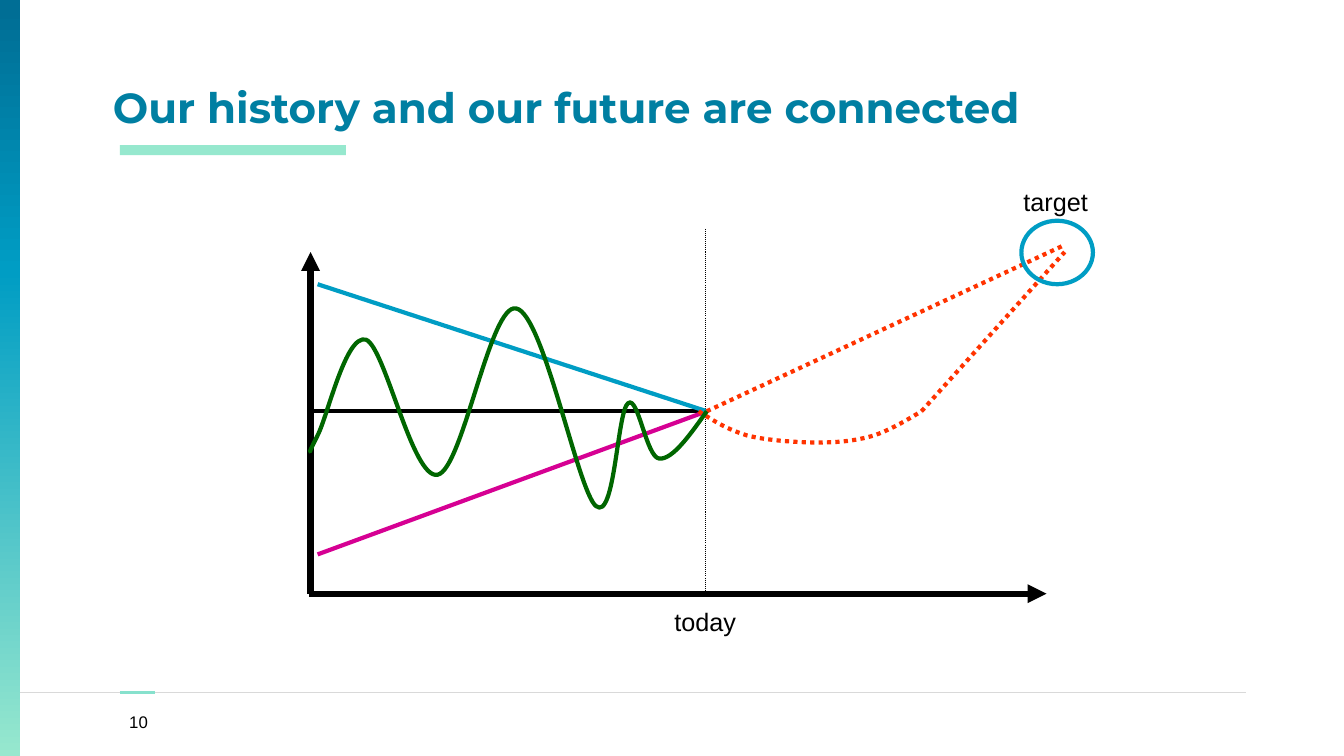
from copy import deepcopy

from lxml.etree import SubElement
from pptx import Presentation
from pptx.dml.color import RGBColor
from pptx.enum.dml import MSO_LINE
from pptx.enum.shapes import MSO_CONNECTOR, MSO_SHAPE
from pptx.enum.text import MSO_ANCHOR, MSO_AUTO_SIZE, PP_ALIGN
from pptx.oxml.ns import qn
from pptx.util import Inches, Pt

COLORS = {
    "title": "007FA2", "text": "000000", "axis": "000000", "rule": "D9D9D9",
    "rule_accent": "87E1CD", "underline": "96E8CE", "upper": "009DC4",
    "lower": "D60093", "history": "006600", "future": "FF3300",
}
BAND_STOPS = [(0, "97E8CE"), (0.64, "009DC4"), (0.99, "006E95")]

TITLE = "Our history and our future are connected"
# text, box, size, wraps, anchor
LABELS = [
    ("today", (6.59, 5.97, 0.81, 0.4), 18, False, MSO_ANCHOR.TOP),
    ("target", (10.05, 1.8, 0.84, 0.4), 18, False, MSO_ANCHOR.TOP),
    ("10", (1.11, 6.96, 0.53, 0.4), 12, True, MSO_ANCHOR.MIDDLE),
]

TODAY = (7.01, 4.08)
BEND = (9.14, 4.08)
# start, end, colour, width, further format
FOOTER_RULES = [
    ((0, 6.87), (12.36, 6.87), "rule", 0.75, {}),
    ((1.19, 6.87), (1.54, 6.87), "rule_accent", 2.75, {}),
]
DIAGRAM_LINES = [
    ((3.08, 5.89), (3.08, 2.5), "axis", 4.5, {"arrow": True}),
    ((3.06, 5.89), (10.38, 5.89), "axis", 4.5, {"arrow": True}),
    ((7, 2.27), (7, 5.87), "axis", 0.75, {"dotted": True}),
    ((3.08, 4.08), (6.93, 4.08), "axis", 3, {}),
    ((3.15, 5.5), TODAY, "lower", 3, {}),
    ((3.15, 2.82), TODAY, "upper", 3, {}),
    (TODAY, (10.56, 2.43), "future", 3, {"dotted": True}),
    (BEND, (10.56, 2.5), "future", 3, {"dotted": True}),
]
TARGET_RING = (10.13, 2.19, 0.71, 0.63)

# Start point, then two control points and an end point per segment
FUTURE_CURVE = [
    (6.93, 4.08),
    (7.07, 4.17), (7.21, 4.26), (7.41, 4.32),
    (7.6, 4.37), (7.91, 4.39), (8.12, 4.39),
    (8.33, 4.39), (8.5, 4.37), (8.67, 4.32),
    (8.84, 4.26), (8.99, 4.17), BEND,
]
HISTORY_CURVE = [
    (3.08, 4.47),
    (3.07, 4.49), (3.06, 4.5), (3.15, 4.32),
    (3.25, 4.13), (3.43, 3.31), (3.63, 3.37),
    (3.82, 3.44), (4.09, 4.76), (4.34, 4.71),
    (4.59, 4.66), (4.86, 3), (5.12, 3.06),
    (5.39, 3.11), (5.73, 4.87), (5.91, 5.02),
    (6.1, 5.18), (6.12, 4.08), (6.23, 4),
    (6.33, 3.92), (6.41, 4.54), (6.54, 4.55),
    (6.67, 4.56), (6.84, 4.32), TODAY,
]


def inches(values):
    return [Inches(value) for value in values]


def rgb(name):
    return RGBColor.from_string(COLORS[name])


def write(frame, text, *, size, color="text", font="Arial", bold=False,
          align=PP_ALIGN.CENTER, anchor=MSO_ANCHOR.TOP, wrap=True, spacing=None):
    frame.word_wrap = wrap
    frame.auto_size = MSO_AUTO_SIZE.NONE
    frame.vertical_anchor = anchor
    paragraph = frame.paragraphs[0]
    paragraph.alignment = align
    paragraph.line_spacing = spacing
    run = paragraph.add_run()
    run.text = text
    run.font.name, run.font.size, run.font.bold = font, Pt(size), bold
    run.font.color.rgb = rgb(color)


def stroke(line, color, width, dotted=False):
    line.color.rgb = rgb(color)
    line.width = Pt(width)
    if dotted:
        line.dash_style = MSO_LINE.ROUND_DOT


def draw_line(shapes, start, end, color, width, dotted=False, arrow=False):
    connector = shapes.add_connector(MSO_CONNECTOR.STRAIGHT, *inches(start + end))
    stroke(connector.line, color, width, dotted)
    properties = connector._element.spPr
    if arrow:
        SubElement(properties.find(qn("a:ln")), qn("a:tailEnd"), type="triangle")
    SubElement(properties, qn("a:effectLst"))


def draw_curve(shapes, points, color, dotted=False):
    """Draw a chain of cubic Bezier segments."""
    start, *controls = [inches(point) for point in points]
    builder = shapes.build_freeform(*start)
    builder.add_line_segments(controls, close=False)
    curve = builder.convert_to_shape()
    outline = curve._element.find(".//" + qn("a:path"))
    steps = outline.findall(qn("a:lnTo"))
    for first in range(0, len(steps), 3):
        bezier = SubElement(outline, qn("a:cubicBezTo"))
        for step in steps[first:first + 3]:
            bezier.append(step[0])
            outline.remove(step)
    curve.fill.background()
    curve.shadow.inherit = False
    stroke(curve.line, color, 3, dotted)


def add_block(shapes, kind, box):
    block = shapes.add_shape(kind, *inches(box))
    block.shadow.inherit = False
    return block


def fill_band(band):
    band.line.fill.background()
    band.fill.gradient()
    band.fill.gradient_angle = 90
    stop_list = band._element.spPr.find(".//" + qn("a:gsLst"))
    stop_list.append(deepcopy(stop_list[-1]))
    for stop, (position, color) in zip(band.fill.gradient_stops, BAND_STOPS):
        stop.position = position
        stop.color.rgb = RGBColor.from_string(color)


def main():
    deck = Presentation()
    deck.slide_width, deck.slide_height = inches((13.33, 7.5))
    slide = deck.slides.add_slide(deck.slide_layouts[5])
    shapes = slide.shapes

    for start, end, color, width, style in FOOTER_RULES:
        draw_line(shapes, start, end, color, width, **style)
    fill_band(add_block(shapes, MSO_SHAPE.RECTANGLE, (0, 0, 0.2, 7.5)))
    underline = add_block(shapes, MSO_SHAPE.RECTANGLE, (1.19, 1.44, 2.24, 0.1))
    underline.fill.solid()
    underline.fill.fore_color.rgb = rgb("underline")
    underline.line.fill.background()

    title = shapes.title
    title.left, title.top, title.width, title.height = inches((1.02, 0, 11.39, 1.41))
    frame = title.text_frame
    frame.margin_left = frame.margin_right = Inches(0.1)
    frame.margin_top = frame.margin_bottom = Inches(0.1)
    write(frame, TITLE, size=30, color="title", font="Montserrat", bold=True,
          align=PP_ALIGN.LEFT, anchor=MSO_ANCHOR.BOTTOM, spacing=0.8)

    for start, end, color, width, style in DIAGRAM_LINES:
        draw_line(shapes, start, end, color, width, **style)
    ring = add_block(shapes, MSO_SHAPE.OVAL, TARGET_RING)
    ring.fill.background()
    stroke(ring.line, "upper", 3)
    draw_curve(shapes, FUTURE_CURVE, "future", dotted=True)
    draw_curve(shapes, HISTORY_CURVE, "history")

    for text, box, size, wrap, anchor in LABELS:
        label = shapes.add_textbox(*inches(box))
        write(label.text_frame, text, size=size, wrap=wrap, anchor=anchor)

    deck.save("out.pptx")


if __name__ == "__main__":
    main()
